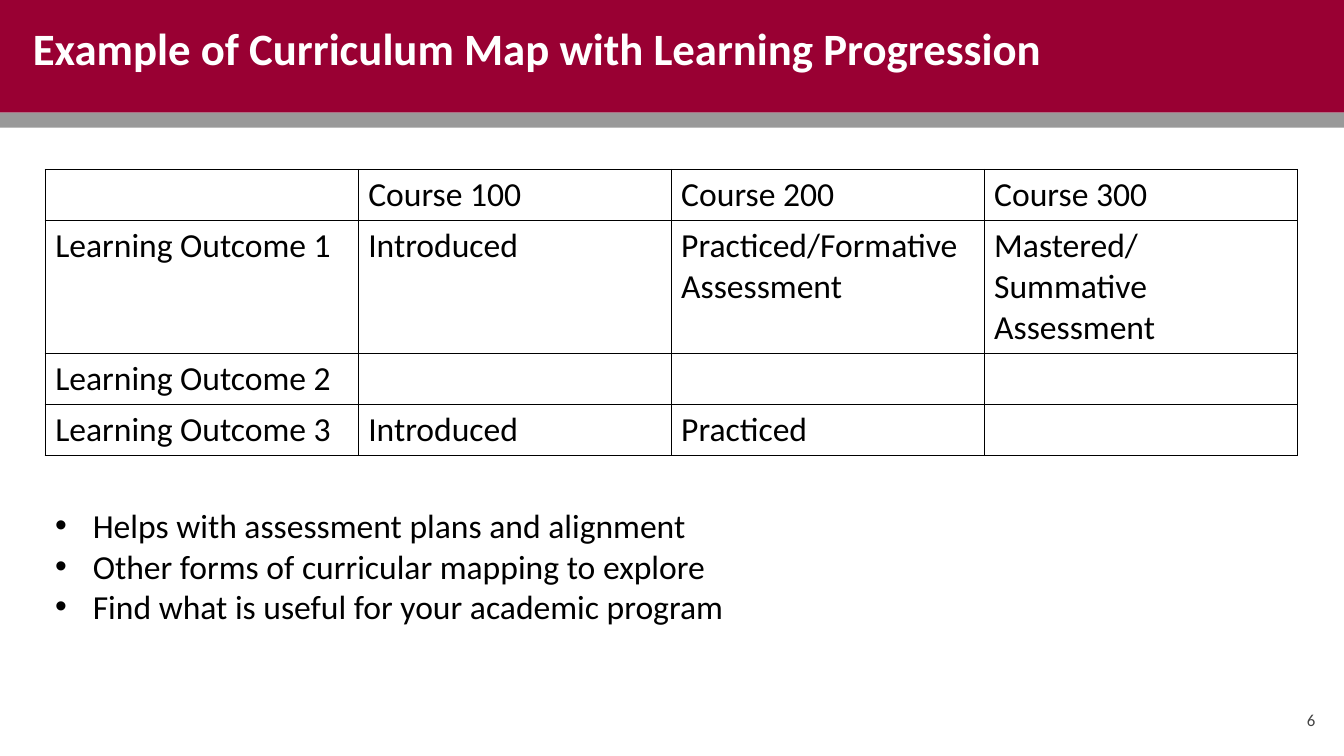
"""Build the curriculum map slide with its table and takeaways."""
from dataclasses import dataclass

from lxml import etree
from pptx import Presentation
from pptx import util as u
from pptx.dml.color import RGBColor
from pptx.enum import text
from pptx.oxml import ns


@dataclass(frozen=True)
class Theme:
    """Colours, type sizes and font of the slide."""
    crimson: str = "990033"
    grey: str = "999999"
    white: str = "FFFFFF"
    black: str = "000000"
    charcoal: str = "434343"
    font: str = "Calibri"
    title_size: int = 32
    body_size: int = 24
    number_size: int = 12


@dataclass(frozen=True)
class Box:
    """A place on the slide in centimetres."""
    left: float
    top: float
    width: float
    height: float

    def lengths(self) -> tuple:
        """Return the four lengths as slide units."""
        return tuple(u.Cm(v) for v in (self.left, self.top, self.width, self.height))


@dataclass(frozen=True)
class Band:
    """A filled strip of the header."""
    box: Box
    colour: str


@dataclass(frozen=True)
class Label:
    """A text box with its lines and look."""
    box: Box
    lines: tuple
    size: int
    colour: str
    inset: float = 0.25
    bold: bool = False
    bulleted: bool = False
    align: text.PP_ALIGN = text.PP_ALIGN.LEFT
    anchor: text.MSO_ANCHOR = text.MSO_ANCHOR.TOP


THEME = Theme()
SLIDE_WIDTH, SLIDE_HEIGHT = 33.87, 19.05
MARGIN, CONTENT_WIDTH = 1.14, 31.55
HEADER_BANDS = (
    Band(Box(0, 0, SLIDE_WIDTH, 2.84), THEME.crimson),
    Band(Box(0, 2.84, SLIDE_WIDTH, 0.38), THEME.grey),
)
LABELS = (
    Label(Box(0.58, 0.28, CONTENT_WIDTH, 2.13),
          ("Example of Curriculum Map with Learning Progression",),
          THEME.title_size, THEME.white, bold=True),
    Label(Box(31.37, 17.58, 2.03, 1.14), ("6",), THEME.number_size, THEME.charcoal,
          align=text.PP_ALIGN.RIGHT, anchor=text.MSO_ANCHOR.MIDDLE),
    Label(Box(MARGIN, 12.6, CONTENT_WIDTH, 3.33),
          ("Helps with assessment plans and alignment",
           "Other forms of curricular mapping to explore",
           "Find what is useful for your academic program"),
          THEME.body_size, THEME.black, inset=0.13, bulleted=True),
)
CURRICULUM = (
    ("", "Course 100", "Course 200", "Course 300"),
    ("Learning Outcome 1", "Introduced", "Practiced/Formative Assessment",
     "Mastered/\nSummative Assessment"),
    ("Learning Outcome 2", "", "", ""),
    ("Learning Outcome 3", "Introduced", "Practiced", ""),
)
ROW_HEIGHTS = (1.28, 3.35, 1.28, 1.28)


def apply(target, values: dict) -> None:
    """Set each named attribute on the target."""
    for name, value in values.items():
        setattr(target, name, value)


def style_font(font, size: int, colour: str, bold: bool = False) -> None:
    """Give a font its face, size, weight and colour."""
    apply(font, {"name": THEME.font, "size": u.Pt(size), "bold": bold})
    font.color.rgb = RGBColor.from_string(colour)


def add_bullet(paragraph) -> None:
    """Give a paragraph a hanging round bullet."""
    properties = paragraph._p.get_or_add_pPr()
    properties.set("marL", str(u.Cm(0.95)))
    properties.set("indent", str(-u.Cm(0.95)))
    etree.SubElement(properties, ns.qn("a:buFont")).set("typeface", "Arial")
    etree.SubElement(properties, ns.qn("a:buChar")).set("char", "•")


def draw_band(slide, band: Band) -> None:
    """Draw one header strip."""
    strip = slide.shapes.add_shape(1, *band.box.lengths())
    strip.shadow.inherit = False
    strip.fill.solid()
    strip.fill.fore_color.rgb = RGBColor.from_string(band.colour)
    strip.line.fill.background()


def draw_label(slide, label: Label) -> None:
    """Draw one text box."""
    frame = slide.shapes.add_textbox(*label.box.lengths()).text_frame
    apply(frame, {
        "word_wrap": True,
        "vertical_anchor": label.anchor,
        "margin_left": u.Cm(0.25),
        "margin_right": u.Cm(0.25),
        "margin_top": u.Cm(label.inset),
        "margin_bottom": u.Cm(label.inset),
        "text": "\n".join(label.lines),
    })
    for paragraph in frame.paragraphs:
        if label.bulleted:
            add_bullet(paragraph)
        paragraph.alignment = label.align
        for run in paragraph.runs:
            style_font(run.font, label.size, label.colour, label.bold)


def outline_cell(cell) -> None:
    """Put a thin black border on all four sides of a cell."""
    properties = cell._tc.get_or_add_tcPr()
    for position, side in enumerate(("lnL", "lnR", "lnT", "lnB")):
        border = etree.Element(ns.qn(f"a:{side}"), w=str(u.Pt(1)))
        fill = etree.SubElement(border, ns.qn("a:solidFill"))
        etree.SubElement(fill, ns.qn("a:srgbClr")).set("val", THEME.black)
        properties.insert(position, border)


def draw_curriculum(slide) -> None:
    """Draw the table of outcomes by course."""
    box = Box(MARGIN, 4.27, CONTENT_WIDTH, sum(ROW_HEIGHTS))
    table = slide.shapes.add_table(
        len(CURRICULUM), len(CURRICULUM[0]), *box.lengths()).table
    apply(table, {"first_row": False, "horz_banding": False})
    for row, height, entries in zip(table.rows, ROW_HEIGHTS, CURRICULUM):
        row.height = u.Cm(height)
        for cell, entry in zip(row.cells, entries):
            cell.text = entry
            cell.fill.background()
            outline_cell(cell)
            for paragraph in cell.text_frame.paragraphs:
                for run in paragraph.runs:
                    style_font(run.font, THEME.body_size, THEME.black)


def main() -> None:
    """Build and save the slide."""
    deck = Presentation()
    apply(deck, {"slide_width": u.Cm(SLIDE_WIDTH), "slide_height": u.Cm(SLIDE_HEIGHT)})
    slide = deck.slides.add_slide(deck.slide_layouts[6])
    for band in HEADER_BANDS:
        draw_band(slide, band)
    draw_curriculum(slide)
    for label in LABELS:
        draw_label(slide, label)
    deck.save("out.pptx")


if __name__ == "__main__":
    main()
